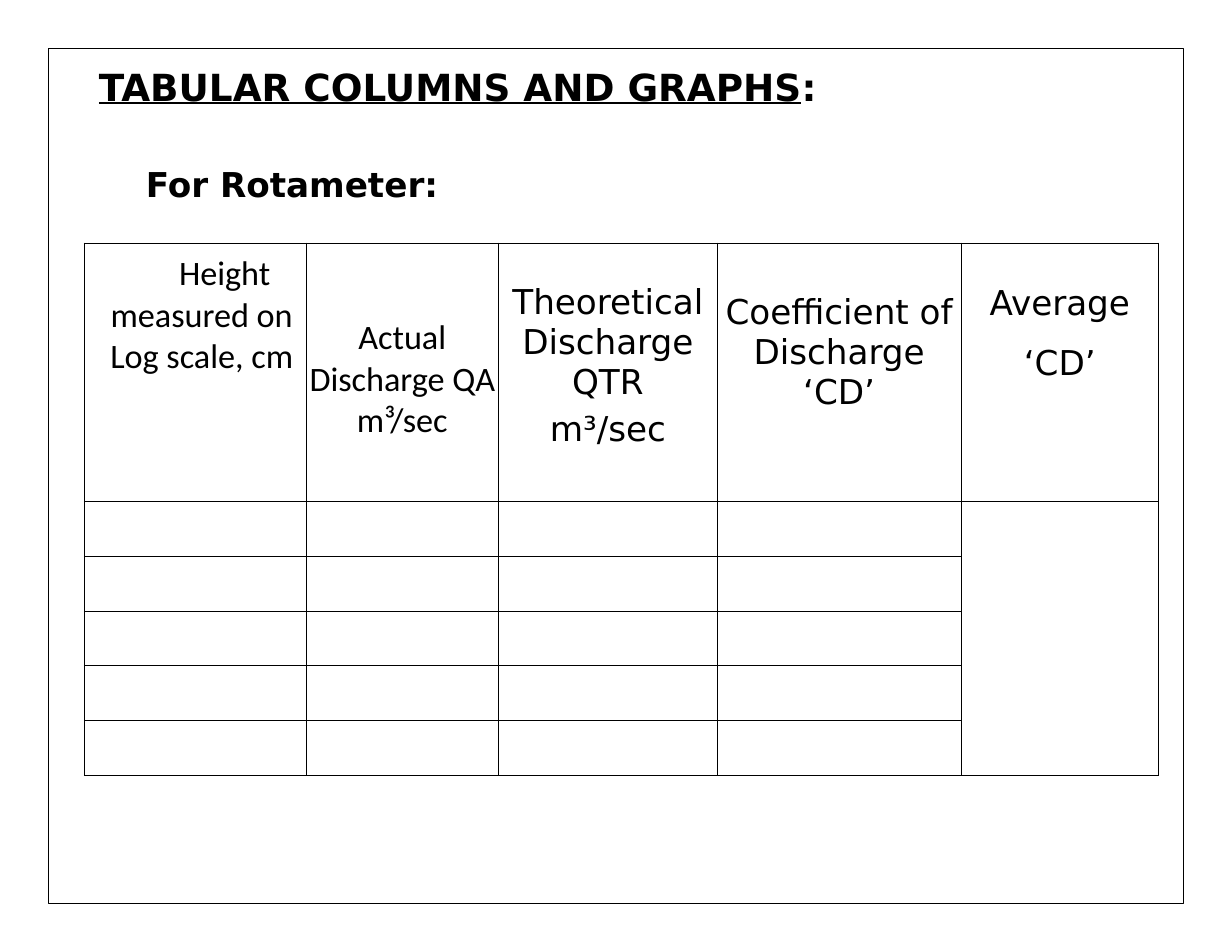
import pptx
import pptx.util
import pptx.dml.color
import pptx.enum.shapes
import pptx.enum.text
import pptx.oxml.ns
import lxml.etree

Cm = pptx.util.Cm
Pt = pptx.util.Pt
ALIGN = pptx.enum.text.PP_ALIGN
BLACK = pptx.dml.color.RGBColor(0, 0, 0)
SANS = "DejaVu Sans"
PLAIN = "Calibri"

COLS = [5.03, 4.37, 4.95, 5.54, 4.47]
ROWS = [5.87] + [1.24] * 5
HEADS = [
    (["Height measured on Log scale, cm"], PLAIN, 0.23, 0),
    (["Actual Discharge QA m³/sec"], PLAIN, 1.68, 0),
    (["Theoretical Discharge QTR", "m³/sec"], SANS, 0.91, 4.5),
    (["Coefficient of Discharge ‘CD’"], SANS, 1.13, 0),
    (["Average", "‘CD’"], SANS, 0.93, 12.8),
]


def write(para, text, size=22, font=SANS, bold=False, line=False,
          align=ALIGN.LEFT, gap=0):
    para.alignment = align
    para.space_before = Pt(gap)
    run = para.add_run()
    run.text = text
    run.font.size = Pt(size)
    run.font.name = font
    run.font.bold = bold
    run.font.underline = line
    run.font.color.rgb = BLACK


def indent(para, left, first):
    props = para._p.get_or_add_pPr()
    props.set("marL", str(Cm(left)))
    props.set("indent", str(Cm(first)))
    return props


def place(shape, box):
    shape.left, shape.top, shape.width, shape.height = map(Cm, box)
    frame = shape.text_frame
    frame.margin_left = frame.margin_right = 0
    frame.margin_top = frame.margin_bottom = 0
    frame.word_wrap = True
    frame.auto_size = pptx.enum.text.MSO_AUTO_SIZE.NONE
    frame.vertical_anchor = pptx.enum.text.MSO_ANCHOR.TOP
    return frame.paragraphs[0]


def border(cell):
    props = cell._tc.get_or_add_tcPr()
    for side in ("a:lnL", "a:lnR", "a:lnT", "a:lnB"):
        edge = lxml.etree.SubElement(props, pptx.oxml.ns.qn(side), w=str(Pt(0.5)))
        fill = lxml.etree.SubElement(edge, pptx.oxml.ns.qn("a:solidFill"))
        lxml.etree.SubElement(fill, pptx.oxml.ns.qn("a:srgbClr"), val=str(BLACK))
    cell.fill.background()


def add_heads(slide, box):
    left, top, width, height = box
    title = place(slide.shapes.title, (left, top, width, 1.1))
    write(title, "TABULAR COLUMNS AND GRAPHS", size=24, bold=True, line=True, gap=1)
    write(title, ":", size=24, bold=True, gap=1)
    body = place(slide.placeholders[1], (left + 1.07, top + 2.26, width - 1.07, height - 2.26))
    props = indent(body, 0, 0)
    write(body, "For Rotameter:", bold=True)
    lxml.etree.SubElement(props, pptx.oxml.ns.qn("a:buNone"))


def add_frame(slide, box):
    frame = slide.shapes.add_shape(
        pptx.enum.shapes.MSO_SHAPE.RECTANGLE, *map(Cm, box))
    frame.shadow.inherit = False
    frame.fill.background()
    frame.line.color.rgb = BLACK
    frame.line.width = Pt(0.5)


def add_grid(slide, box):
    grid = slide.shapes.add_table(len(ROWS), len(COLS), *map(Cm, box)).table
    grid.first_row = grid.horz_banding = False
    for col, width in zip(grid.columns, COLS):
        col.width = Cm(width)
    for row, height in zip(grid.rows, ROWS):
        row.height = Cm(height)
    for cell in grid.iter_cells():
        border(cell)
    for cell, (lines, font, top, gap) in zip(grid.rows[0].cells, HEADS):
        cell.margin_left = cell.margin_right = cell.margin_bottom = 0
        cell.margin_top = Cm(top)
        frame = cell.text_frame
        for i, text in enumerate(lines):
            para = frame.add_paragraph() if i else frame.paragraphs[0]
            write(para, text, font=font, align=ALIGN.CENTER, gap=gap if i else 0)
    indent(grid.cell(0, 0).text_frame.paragraphs[0], 0.3, 1.04)
    last = len(COLS) - 1
    grid.cell(1, last).merge(grid.cell(len(ROWS) - 1, last))


def main():
    deck = pptx.Presentation()
    deck.slide_width, deck.slide_height = Cm(27.94), Cm(21.59)
    slide = deck.slides.add_slide(deck.slide_layouts[1])
    add_heads(slide, (2.24, 1.45, 16.3, 3.18))
    add_frame(slide, (1.1, 1.1, 25.74, 19.39))
    add_grid(slide, (1.91, 5.51, sum(COLS), sum(ROWS)))
    deck.save("out.pptx")


if __name__ == "__main__":
    main()
